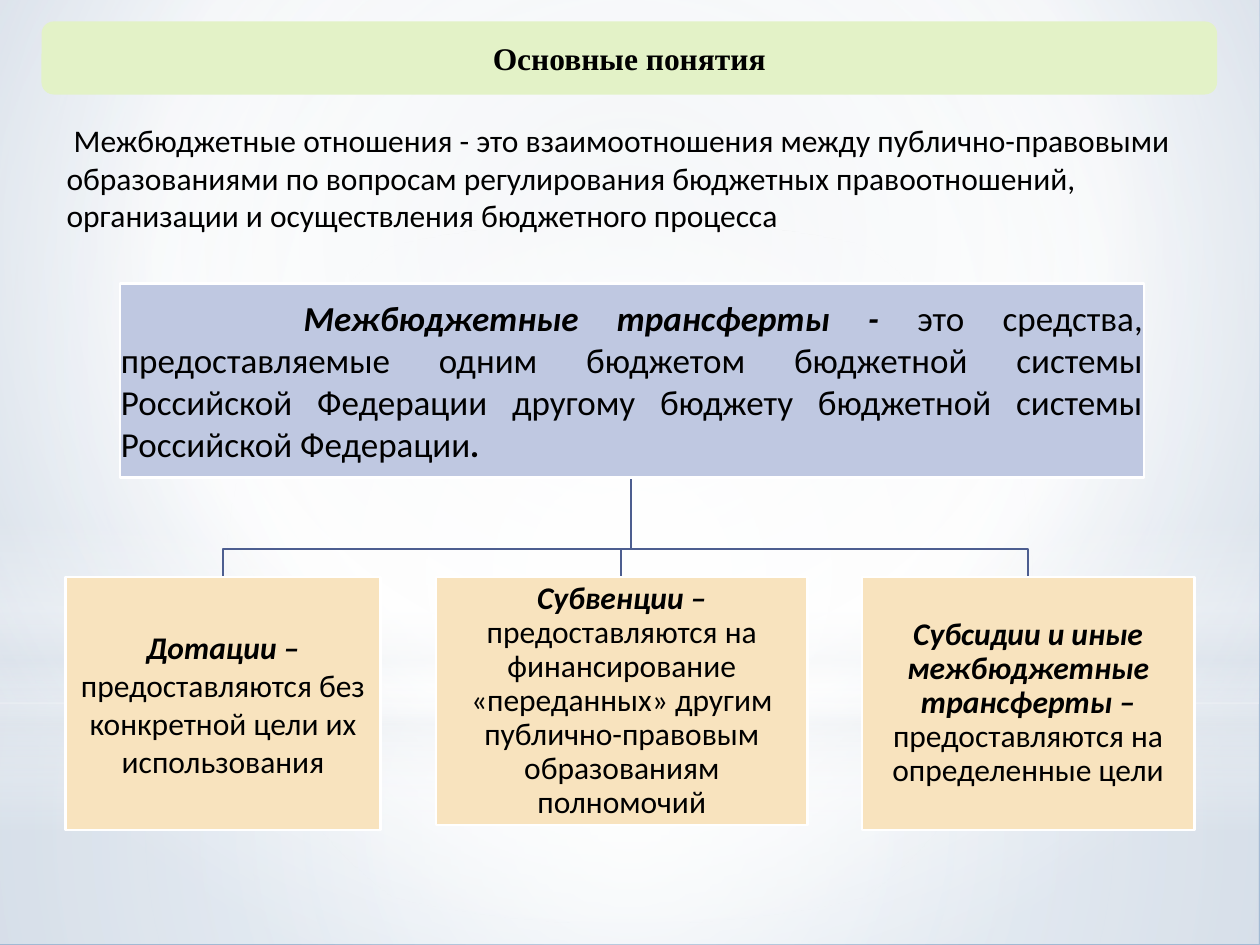
"""Build the slide on interbudgetary relations and the kinds of transfers."""
import lxml.etree
import pptx
import pptx.dml.color
import pptx.enum.shapes
import pptx.enum.text
import pptx.oxml.ns
import pptx.util

Inches, Pt = pptx.util.Inches, pptx.util.Pt
RGBColor = pptx.dml.color.RGBColor
SHAPES = pptx.enum.shapes.MSO_SHAPE
ALIGN = pptx.enum.text.PP_ALIGN
MIDDLE = pptx.enum.text.MSO_ANCHOR.MIDDLE
qn = pptx.oxml.ns.qn

BLACK = RGBColor(0x00, 0x00, 0x00)
WHITE = RGBColor(0xFF, 0xFF, 0xFF)
MIST = RGBColor(0xE4, 0xE9, 0xEF)
SKY = RGBColor(0xD7, 0xDF, 0xE7)
STEEL = RGBColor(0xA2, 0xB9, 0xD3)
GREEN = RGBColor(0xE3, 0xF2, 0xC7)
BLUE = RGBColor(0xBF, 0xC8, 0xE1)
SAND = RGBColor(0xF8, 0xE3, 0xBE)
BRANCH = RGBColor(0x4D, 0x5E, 0x90)


def set_gradient(owner, stops, focus=None):
    gradient = next(owner.iter(qn("a:gradFill")))
    for child in list(gradient):
        gradient.remove(child)
    stop_list = lxml.etree.SubElement(gradient, qn("a:gsLst"))
    for position, color, opacity in stops:
        stop = lxml.etree.SubElement(stop_list, qn("a:gs"), pos=str(position * 1000))
        tone = lxml.etree.SubElement(stop, qn("a:srgbClr"), val=str(color))
        if opacity < 100:
            lxml.etree.SubElement(tone, qn("a:alpha"), val=str(opacity * 1000))
    if focus:
        radial = lxml.etree.SubElement(gradient, qn("a:path"), {"path": "circle"})
        sides = {side: str(value * 1000) for side, value in zip("ltrb", focus)}
        lxml.etree.SubElement(radial, qn("a:fillToRect"), sides)
    else:
        lxml.etree.SubElement(gradient, qn("a:lin"), ang="5400000", scaled="0")


def add_box(place, kind, fill, runs, size, font="Calibri", margin=0.01):
    box = slide.shapes.add_shape(kind, *map(Inches, place))
    box.shadow.inherit = False
    box.fill.solid()
    box.fill.fore_color.rgb = fill
    box.line.color.rgb = WHITE
    box.line.width = Pt(1.25)
    frame = box.text_frame
    frame.word_wrap = True
    frame.vertical_anchor = MIDDLE
    frame.margin_left = frame.margin_right = Inches(margin)
    frame.margin_top = frame.margin_bottom = Inches(margin)
    paragraph = frame.paragraphs[0]
    paragraph.alignment = ALIGN.CENTER
    for text, bold, italic in runs:
        run = paragraph.add_run()
        run.text = text
        run.font.name = font
        run.font.size = Pt(size)
        run.font.bold = bold
        run.font.italic = italic
        run.font.color.rgb = BLACK
    return box


deck = pptx.Presentation()
deck.slide_width, deck.slide_height = Inches(10), Inches(7.5)
slide = deck.slides.add_slide(deck.slide_layouts[6])

slide.background.fill.gradient()
set_gradient(slide.element, [(0, SKY, 100), (60, WHITE, 100), (100, STEEL, 100)], (50, 25, 50, 75))

center = (50, 50, 50, 50)
glows = [
    (SHAPES.RECTANGLE, 5.58, 1.91, [(0, WHITE, 91), (37, WHITE, 76), (100, MIST, 79)], center),
    (SHAPES.RECTANGLE, 0, 5.58, [(0, WHITE, 89), (48, WHITE, 62), (100, MIST, 79)], center),
    (SHAPES.RECTANGLE, 4.12, 2.49, [(0, WHITE, 0), (29, WHITE, 30), (45, MIST, 40),
                                    (55, WHITE, 26), (65, MIST, 60), (100, WHITE, 0)], None),
    (SHAPES.OVAL, 1.75, 5.58, [(0, WHITE, 100), (56, WHITE, 0)], center),
]
for kind, top, height, stops, focus in glows:
    glow = slide.shapes.add_shape(kind, 0, Inches(top), Inches(9.99), Inches(height))
    glow.shadow.inherit = False
    glow.line.fill.background()
    glow.fill.gradient()
    set_gradient(glow.element, stops, focus)

title = add_box((0.33, 0.17, 9.33, 0.58), SHAPES.ROUNDED_RECTANGLE, GREEN,
                [("Основные понятия", True, False)], 18, "Times New Roman", 0.05)
title.line.fill.background()

definition = slide.shapes.add_textbox(Inches(0.43), Inches(0.91), Inches(9.05), Inches(1))
definition.text_frame.word_wrap = True
definition.text_frame.text = (
    " Межбюджетные отношения - это взаимоотношения между публично-правовыми "
    "образованиями по вопросам регулирования бюджетных правоотношений, "
    "организации и осуществления бюджетного процесса")
definition_font = definition.text_frame.paragraphs[0].runs[0].font
definition_font.name = "Calibri"
definition_font.size = Pt(18)
definition_font.color.rgb = BLACK

trunk, trunk_top, fork, branch_end = 5.01, 3.79, 4.36, 4.58
for branch in (8.16, 4.93, 1.77):
    builder = slide.shapes.build_freeform(Inches(trunk), Inches(trunk_top))
    corners = [(trunk, fork), (branch, fork), (branch, branch_end)]
    builder.add_line_segments([(Inches(x), Inches(y)) for x, y in corners], close=False)
    link = builder.convert_to_shape()
    link.shadow.inherit = False
    link.fill.background()
    link.line.color.rgb = BRANCH
    link.line.width = Pt(1.25)

transfers = add_box((0.95, 2.25, 8.13, 1.54), SHAPES.RECTANGLE, BLUE, [
    ("Межбюджетные трансферты - ", True, True),
    ("это средства, предоставляемые одним бюджетом бюджетной системы Российской "
     "Федерации другому бюджету бюджетной системы Российской Федерации", False, False),
    (".", True, True)], 20)
transfers_paragraph = transfers.text_frame.paragraphs[0]
transfers_paragraph.alignment = ALIGN.JUSTIFY
transfers_paragraph._p.get_or_add_pPr().set("indent", str(Inches(1.45)))

kinds = [
    (0.52, 2.5, 2.01, 1.0, "Дотации – ", "предоставляются без конкретной цели их использования"),
    (3.46, 2.95, 1.97, 0.9, "Субвенции – ", "предоставляются на финансирование «переданных» "
     "другим публично-правовым образованиям полномочий"),
    (6.84, 2.64, 2.01, 0.9, "Субсидии и иные межбюджетные трансферты – ",
     "предоставляются на определенные цели"),
]
for left, width, height, spacing, term, meaning in kinds:
    card = add_box((left, branch_end, width, height), SHAPES.RECTANGLE, SAND,
                   [(term, True, True), (meaning, False, False)], 18)
    card.text_frame.paragraphs[0].line_spacing = spacing

deck.save("out.pptx")
